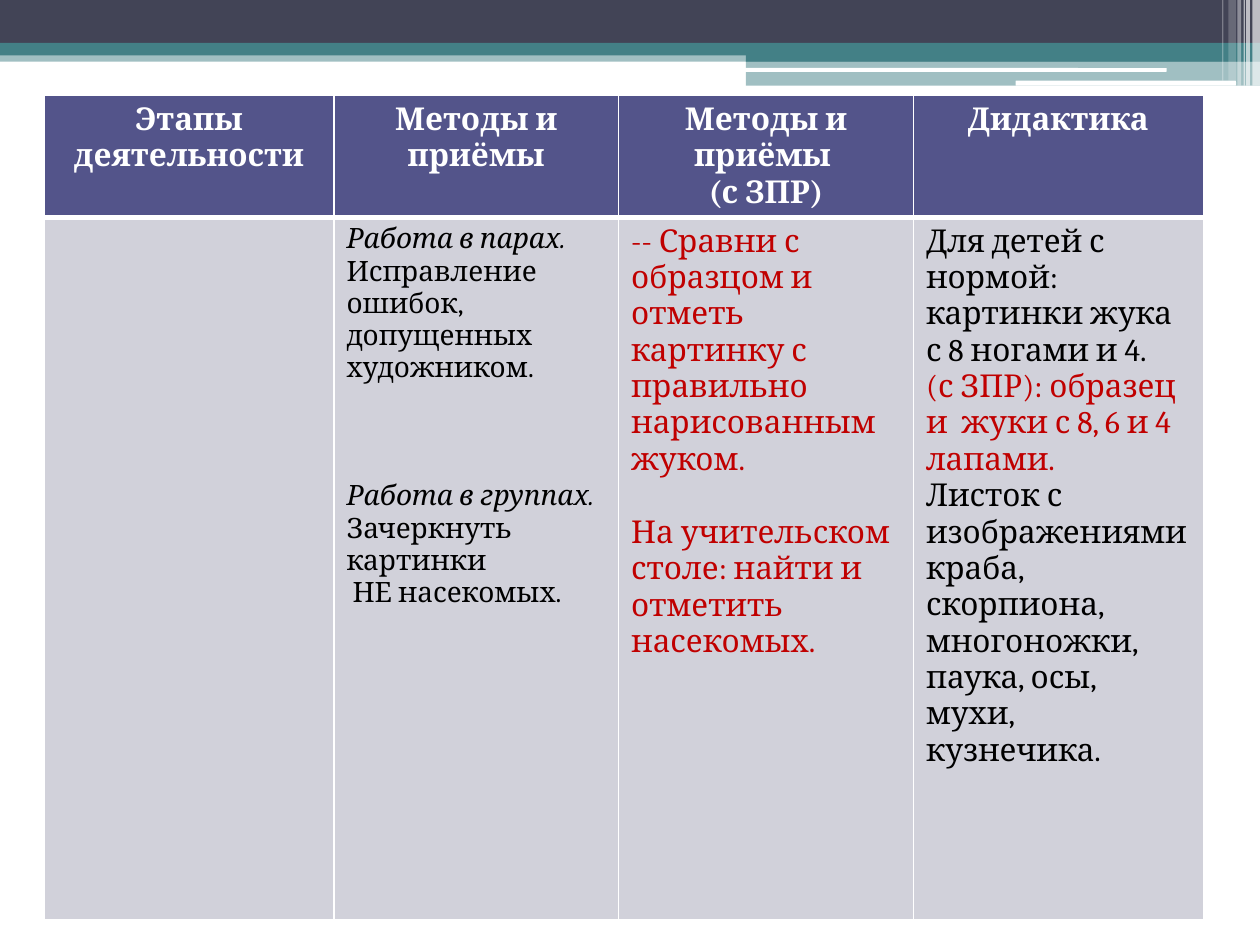
from lxml import etree
from pptx import Presentation
from pptx import util as u
from pptx.dml.color import RGBColor
from pptx.enum import shapes, text
from pptx.oxml import ns

NAVY = RGBColor(0x42, 0x44, 0x56)
TEAL = RGBColor(0x43, 0x80, 0x86)
VIOLET = RGBColor(0x53, 0x54, 0x8A)
PALE = RGBColor(0xD1, 0xD1, 0xDA)
RED = RGBColor(0xC0, 0x00, 0x00)
BLACK = RGBColor(0x00, 0x00, 0x00)
WHITE = RGBColor(0xFF, 0xFF, 0xFF)

BANDS = [
    (0, 0.4, 10, 0.09, TEAL, 50),
    (0, 0, 10, 0.34, NAVY, 100),
    (0, 0.34, 10, 0.1, TEAL, 100),
    (5.92, 0.39, 4.08, 0.1, TEAL, 100),
    (5.92, 0.48, 4.08, 0.2, TEAL, 50),
]
ROUNDED_BARS = [(5.91, 0.54, 3.35, 0.03), (8.06, 0.64, 1.75, 0.04)]
STRIPES = [
    (9.94, 0.06, 0.68, 65),
    (9.89, 0.03, 0.68, 65),
    (9.87, 0.01, 0.68, 60),
    (9.82, 0.03, 0.68, 40),
    (9.75, 0.06, 0.64, 20),
    (9.7, 0.01, 0.64, 30),
]
COLUMNS = [2.3, 2.26, 2.34, 2.3]
ROWS = [0.95, 5.57]
HEADINGS = [
    ["Этапы деятельности"],
    ["Методы и приёмы"],
    ["Методы и приёмы ", "(с ЗПР)"],
    ["Дидактика"],
]
METHODS = [
    ("Работа в парах.", dict(italic=True)),
    ("Исправление ошибок, допущенных художником.", {}),
    ("Работа в группах.", dict(italic=True, before=55)),
    ("Зачеркнуть картинки", {}),
    (" НЕ насекомых.", {}),
]
ADAPTED = [
    ("-- Сравни с образцом и отметь картинку с правильно нарисованным жуком.", dict(color=RED)),
    ("На учительском столе: найти и  отметить насекомых.", dict(color=RED, before=21)),
]
MATERIALS = [
    ("Для детей с нормой: картинки жука с 8 ногами и 4.", {}),
    ("(с ЗПР): образец и  жуки с 8, 6 и 4 лапами.", dict(color=RED)),
    ("Листок с изображениями краба, скорпиона, многоножки, паука, осы, мухи, кузнечика.", {}),
]


class SlideBuilder:
    """Hold the deck style and the current page."""

    font = "Cambria"

    def __init__(self, deck):
        self.page = deck.slides.add_slide(deck.slide_layouts[6])

    def bar(self, left, top, width, height, color, opacity=100,
            kind=shapes.MSO_SHAPE.RECTANGLE):
        bar = self.page.shapes.add_shape(
            kind, *(u.Inches(n) for n in (left, top, width, height)))
        bar.shadow.inherit = False
        bar.line.fill.background()
        bar.fill.solid()
        bar.fill.fore_color.rgb = color
        if opacity < 100:
            tint = bar.fill._xPr.find(".//" + ns.qn("a:srgbClr"))
            etree.SubElement(tint, ns.qn("a:alpha"), val=str(opacity * 1000))

    def table(self, left, top, columns, rows):
        frame = self.page.shapes.add_table(
            len(rows), len(columns), u.Inches(left), u.Inches(top),
            u.Inches(sum(columns)), u.Inches(sum(rows)))
        for column, width in zip(frame.table.columns, columns):
            column.width = u.Inches(width)
        for row, height in zip(frame.table.rows, rows):
            row.height = u.Inches(height)
        return frame.table

    def cell(self, cell, fill, top, bottom):
        properties = cell._tc.get_or_add_tcPr()
        for side, width in (("L", 1), ("R", 1), ("T", top), ("B", bottom)):
            line = etree.SubElement(
                properties, ns.qn("a:ln" + side), w=str(u.Pt(width)))
            solid = etree.SubElement(line, ns.qn("a:solidFill"))
            etree.SubElement(solid, ns.qn("a:srgbClr"), val=str(WHITE))
        cell.fill.solid()
        cell.fill.fore_color.rgb = fill

    def paragraph(self, cell, words, size=18, color=BLACK, bold=False,
                  italic=False, align=text.PP_ALIGN.LEFT, before=0):
        frame = cell.text_frame
        para = frame.add_paragraph() if frame.text else frame.paragraphs[0]
        para.alignment = align
        para.space_before = u.Pt(before)
        span = para.add_run()
        span.text = words
        span.font.name = self.font
        span.font.size = u.Pt(size)
        span.font.bold = bold
        span.font.italic = italic
        span.font.color.rgb = color


def main():
    deck = Presentation()
    deck.slide_width, deck.slide_height = u.Inches(10), u.Inches(7.5)
    builder = SlideBuilder(deck)
    for band in BANDS:
        builder.bar(*band)
    for place in ROUNDED_BARS:
        builder.bar(*place, WHITE, kind=shapes.MSO_SHAPE.ROUNDED_RECTANGLE)
    for left, width, height, opacity in STRIPES:
        builder.bar(left, 0, width, height, WHITE, opacity)

    table = builder.table(0.35, 0.76, COLUMNS, ROWS)
    for index, lines in enumerate(HEADINGS):
        heading = table.cell(0, index)
        builder.cell(heading, VIOLET, 1, 3)
        for words in lines:
            builder.paragraph(heading, words, color=WHITE, bold=True,
                              align=text.PP_ALIGN.CENTER)
    bodies = [([], 18), (METHODS, 16), (ADAPTED, 18), (MATERIALS, 18)]
    for index, (lines, size) in enumerate(bodies):
        body = table.cell(1, index)
        builder.cell(body, PALE, 3, 1)
        for words, style in lines:
            builder.paragraph(body, words, size, **style)
    deck.save("out.pptx")


if __name__ == "__main__":
    main()
